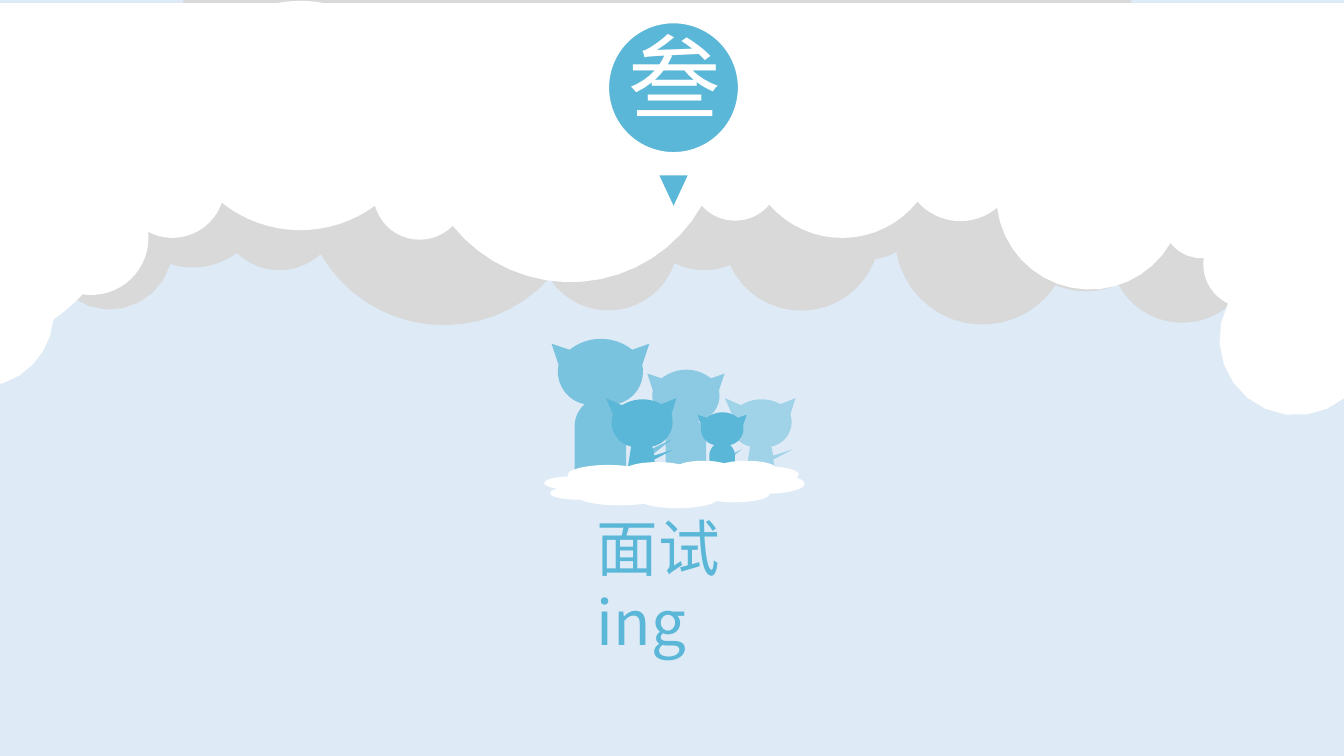
"""Build the section slide 叁, 面试ing: clouds, a family of cats and a title."""
from math import atan, cos, sin
from lxml.etree import SubElement
from pptx import Presentation
from pptx.dml.color import RGBColor
from pptx.enum.shapes import MSO_SHAPE
from pptx.oxml.ns import qn
from pptx.util import Inches, Pt

COLOURS = {"sky": "DEEBF7", "shade": "D9D9D9", "white": "FFFFFF", "blue": "5BB7D7"}
FONT = "Noto Sans CJK SC"
GROUND = 4.82
ARC_STEPS = 16

# Each corner is x, y and, where an arc leads to the next corner, twice its height over its chord.
GREY_CLOUD = [
    (1.03, 1.82, 1.89), (1.69, 2.62, 0.24), (2.35, 2.51, 0.4), (3.18, 2.52, 0.51),
    (5.45, 2.76, 0.63), (6.69, 2.61, 0.22), (7.24, 2.63, 0.67), (8.68, 2.57, 0.1),
    (8.89, 2.5, 0.68), (10.47, 2.83, 0.21), (11.09, 2.82, 0.54), (12.29, 2.93, 1.58),
    (11.86, 1.6), (11.22, 1.25), (11.22, -0.16), (1.82, -0.16), (1.82, 0.82),
]
WHITE_CLOUD = [
    (-0.79, 2.67, 1.32), (0.53, 3.17, 0.05), (0.82, 2.92, 0.49), (1.47, 2.3, 0.46),
    (2.2, 2.01, 0.34), (3.72, 2.04, 0.58), (4.49, 2.24, 0.53), (6.96, 2.04, 0.46),
    (7.63, 2.03, 0.47), (9.1, 2, 0.41), (9.89, 2.06, 0.72), (11.61, 2.41, 0.25),
    (11.94, 2.56, 0.33), (12.18, 3.01, 1.93), (13.41, 2.84), (13.35, 0.03),
    (3.21, 0.03, 0.09), (2.75, 0.03), (-0.05, 0.03),
]
CAT = [
    (6.27, 3.47, 0.35), (5.65, 3.47), (5.47, 3.41), (5.54, 3.62, 0.42), (5.8, 4.01, 0.2),
    (5.7, 4.21), (5.7, 4.82), (6.21, 4.82), (6.21, 4.69), (6.41, 4.56), (6.66, 4.36),
    (6.47, 4.45), (6.32, 4.58), (6.21, 4.63), (6.21, 4.21, 0.2), (6.11, 4.01, 0.42),
    (6.37, 3.62), (6.44, 3.41),
]
KITTEN = [
    (6.56, 4.01, 0.27), (6.17, 4.02), (6.01, 3.95), (6.08, 4.11, 0.45), (6.26, 4.43),
    (6.2, 4.82), (6.54, 4.82), (6.49, 4.56), (6.68, 4.46), (6.49, 4.52),
    (6.47, 4.43, 0.45), (6.66, 4.11), (6.71, 3.95),
]


def paint(shape, colour, opacity=100):
    shape.shadow.inherit = False
    shape.fill.solid()
    shape.fill.fore_color.rgb = RGBColor.from_string(COLOURS[colour])
    shape.line.fill.background()
    if opacity < 100:
        tint = shape.fill._xPr.find(f".//{qn('a:srgbClr')}")
        SubElement(tint, qn("a:alpha"), val=str(opacity * 1000))


def draw_outline(corners, colour, opacity=100, shift=0, scale=1):
    points = []
    for corner, following in zip(corners, corners[1:] + corners[:1]):
        start, end = complex(*corner[:2]), complex(*following[:2])
        points.append(start)
        for bulge in corner[2:]:
            centre = (start + end) / 2 - 1j * (end - start) * (1 - bulge ** 2) / (4 * bulge)
            for step in range(1, ARC_STEPS):
                angle = 4 * atan(bulge) * step / ARC_STEPS
                points.append(centre + (start - centre) * complex(cos(angle), -sin(angle)))
    left = min(point.real for point in points)
    placed = [(Inches(left + shift + (point.real - left) * scale),
               Inches(GROUND + (point.imag - GROUND) * scale)) for point in points]
    builder = slide.shapes.build_freeform(*placed[0])
    builder.add_line_segments(placed[1:], close=True)
    paint(builder.convert_to_shape(), colour, opacity)


presentation = Presentation()
presentation.slide_width, presentation.slide_height = Inches(13.33), Inches(7.5)
slide = presentation.slides.add_slide(presentation.slide_layouts[6])
slide.background.fill.solid()
slide.background.fill.fore_color.rgb = RGBColor.from_string(COLOURS["sky"])

draw_outline(GREY_CLOUD, "shade")
draw_outline(WHITE_CLOUD, "white")

pointer = slide.shapes.add_shape(
    MSO_SHAPE.ISOSCELES_TRIANGLE, Inches(6.54), Inches(1.74), Inches(0.28), Inches(0.3))
pointer.rotation = 180
paint(pointer, "blue")

badge = slide.shapes.add_shape(
    MSO_SHAPE.OVAL, Inches(6.01), Inches(0.2), Inches(1.34), Inches(1.34))
paint(badge, "blue")
badge.line.color.rgb = RGBColor.from_string(COLOURS["white"])
badge.line.width = Pt(4.5)

for wording, box, size, colour in [
    ("面试ing", (5.82, 5.01, 2.24, 0.83), 44, "blue"),
    ("叁", (6.14, 0.15, 1.13, 1.21), 66, "white"),
]:
    label = slide.shapes.add_textbox(*map(Inches, box))
    label.text_frame.word_wrap = True
    run = label.text_frame.paragraphs[0].add_run()
    run.text = wording
    for attribute, value in {"size": Pt(size), "name": FONT}.items():
        setattr(run.font, attribute, value)
    run.font.color.rgb = RGBColor.from_string(COLOURS[colour])
    SubElement(run.font._element, qn("a:ea"), typeface=FONT)

for corners, opacity, shift, scale in [
    (CAT, 76, 0, 1),
    (KITTEN, 100, 0, 1),
    (CAT, 63, 0.95, 0.79),
    (CAT, 100, 1.45, 0.5),
    (KITTEN, 46, 1.18, 1),
]:
    draw_outline(corners, "blue", opacity, shift, scale)

resting_cloud = slide.shapes.add_shape(
    MSO_SHAPE.CLOUD, Inches(5.4), Inches(4.57), Inches(2.58), Inches(0.47))
paint(resting_cloud, "white")

presentation.save("out.pptx")
